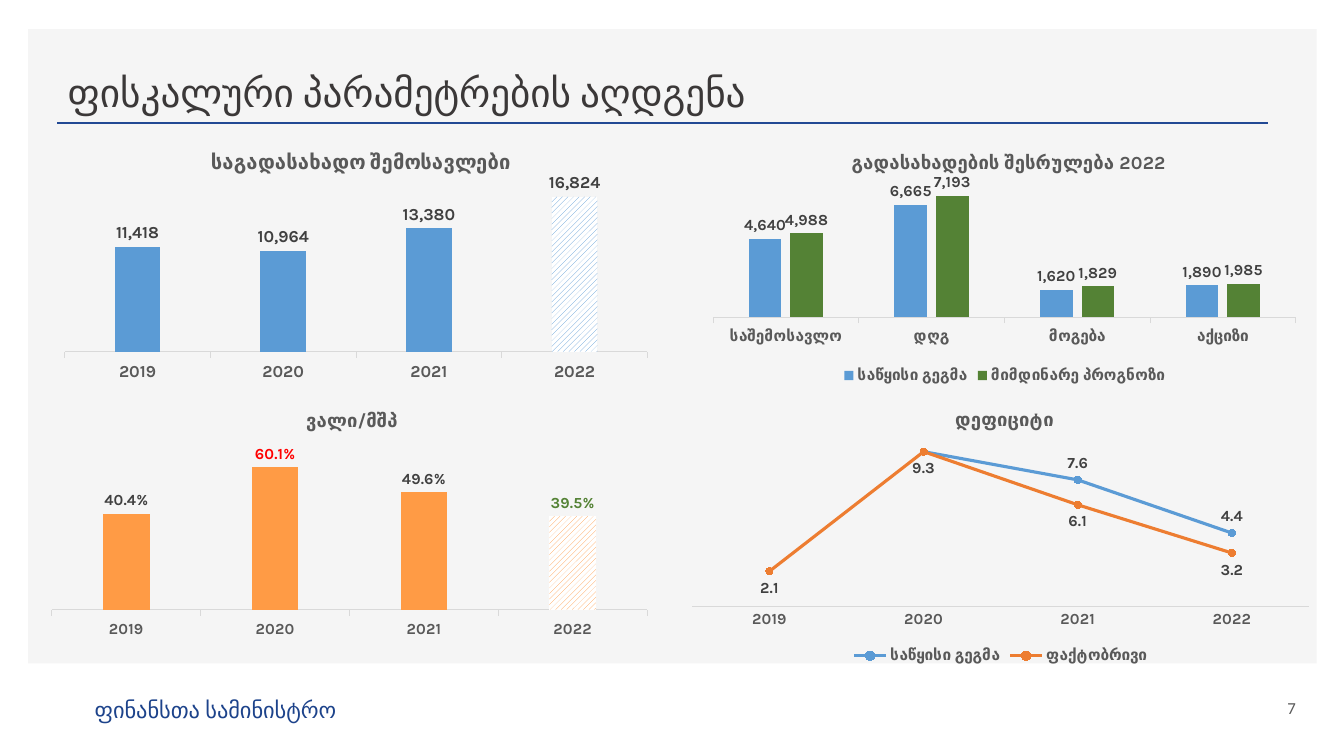
"""Build the fiscal recovery slide with four charts."""
from dataclasses import dataclass

import pptx
import pptx.chart.data
import pptx.dml.color
import pptx.enum.chart
import pptx.enum.dml
import pptx.enum.shapes
import pptx.enum.text
import pptx.oxml
import pptx.oxml.ns
import pptx.util

Inches, Pt = pptx.util.Inches, pptx.util.Pt
XL = pptx.enum.chart
ALIGN, ANCHOR = pptx.enum.text.PP_ALIGN, pptx.enum.text.MSO_ANCHOR


@dataclass(frozen=True)
class Theme:
    panel: str = "F5F5F5"
    rule: str = "224994"
    footer: str = "1D438B"
    heading: str = "3B3838"
    muted: str = "595959"
    label: str = "404040"
    axis: str = "D9D9D9"
    white: str = "FFFFFF"
    blue: str = "5B9BD5"
    green: str = "548235"
    orange: str = "ED7D31"
    amber: str = "FF9B45"
    red: str = "FF0000"
    font: str = "Karla"
    title_font: str = "Calibri"
    title_size: int = 28
    footer_size: int = 16
    number_size: int = 12


T = Theme()
TITLE = "ფისკალური პარამეტრების აღდგენა"
FOOTER = "ფინანსთა სამინისტრო"
PAGE = "7"
YEARS = ["2019", "2020", "2021", "2022"]
TAXES = ["საშემოსავლო", "დღგ", "მოგება", "აქციზი"]
PLAN = "საწყისი გეგმა"
CHARTS = [
    dict(title="საგადასახადო შემოსავლები", title_at=(0.257, 0.05), box=(0.49, 1.3, 6.09, 2.9),
         plot=(0.025, 0.188, 0.949, 0.567), size=12, cats=YEARS, top=18000, fmt="#,##0",
         series=[("Series 1", (11418, 10964, 13380, 16824), T.blue)], hatched=3),
    dict(title="ვალი/მშპ", title_at=(0.425, 0.05), box=(0.36, 3.86, 6.22, 2.9),
         plot=(0.025, 0.188, 0.949, 0.567), size=11, cats=YEARS, top=0.7, fmt="0.0%",
         series=[("Series 1", (0.404, 0.601, 0.496, 0.395), T.amber)], hatched=3,
         accents={1: T.red, 3: T.green}),
    dict(title="დეფიციტი", title_at=(0.424, 0.05), box=(6.74, 3.86, 6.37, 2.78),
         plot=(0.02, 0.182, 0.96, 0.593), size=11, cats=YEARS, top=10, fmt="#,##0.0", line=True,
         series=[(PLAN, (None, 9.3, 7.6, 4.4), T.blue),
                 ("ფაქტობრივი", (2.1, 9.3, 6.1, 3.2), T.orange)]),
    dict(title="გადასახადების შესრულება 2022", title_at=(0.245, 0.06), box=(6.92, 1.3, 6.09, 2.56),
         plot=(0.025, 0.199, 0.949, 0.523), size=11, cats=TAXES, top=8000, fmt="#,##0",
         series=[(PLAN, (4640, 6665, 1620, 1890), T.blue),
                 ("მიმდინარე პროგნოზი", (4988, 7193, 1829, 1985), T.green)]),
]


def rgb(code):
    return pptx.dml.color.RGBColor.from_string(code)


def style(font, size, color, name=T.font, bold=True):
    font.size, font.name, font.bold = Pt(size), name, bold
    font.color.rgb = rgb(color)


def write(tf, text, size, color, name, align=ALIGN.LEFT, anchor=ANCHOR.TOP):
    tf.vertical_anchor = anchor
    p = tf.paragraphs[0]
    p.alignment = align
    r = p.add_run()
    r.text = text
    style(r.font, size, color, name, False)


def chart_xml(body):
    return pptx.oxml.parse_xml(body.replace(">", f" {pptx.oxml.ns.nsdecls('c')}>", 1))


def set_layout(parent, values, inner=False):
    target = '<c:layoutTarget val="inner"/>' if inner else ""
    modes = '<c:xMode val="edge"/><c:yMode val="edge"/>'
    sides = "".join(f'<c:{k} val="{v}"/>' for k, v in zip("xywh", values))
    layout = chart_xml(f"<c:layout><c:manualLayout>{target}{modes}{sides}"
                       "</c:manualLayout></c:layout>")
    old = parent.find(pptx.oxml.ns.qn("c:layout"))
    if old is None:
        parent.insert(0, layout)
    else:
        parent.replace(old, layout)


def style_axes(chart, size, top):
    ca, va = chart.category_axis, chart.value_axis
    is_line = chart.chart_type == XL.XL_CHART_TYPE.LINE_MARKERS
    ca.major_tick_mark = XL.XL_TICK_MARK.NONE if is_line else XL.XL_TICK_MARK.OUTSIDE
    ca.format.line.color.rgb = rgb(T.axis)
    ca.format.line.width = Pt(0.75)
    style(ca.tick_labels.font, size, T.muted)
    va.visible = va.has_major_gridlines = False
    va.minimum_scale, va.maximum_scale = 0, top


def style_labels(ser, size, fmt, position):
    labels = ser.data_labels
    labels.show_value = True
    labels.number_format, labels.number_format_is_linked = fmt, False
    labels.position = position
    style(labels.font, size, T.label)
    return labels


def style_line(ser, color, size, fmt, first):
    ser.smooth = False
    ser.format.line.color.rgb = rgb(color)
    ser.format.line.width = Pt(2.25)
    ser.marker.style, ser.marker.size = XL.XL_MARKER_STYLE.CIRCLE, 5
    for part in (ser.marker.format.fill, ser.marker.format.line.fill):
        part.solid()
        part.fore_color.rgb = rgb(color)
    pos = XL.XL_LABEL_POSITION
    labels = style_labels(ser, size, fmt, pos.ABOVE if first else pos.BELOW)
    if first:
        labels._element.insert(0, chart_xml('<c:dLbl><c:idx val="1"/><c:delete val="1"/></c:dLbl>'))


def style_bars(ser, color, size, fmt, hatched, accents):
    outside = XL.XL_LABEL_POSITION.OUTSIDE_END
    ser.format.fill.solid()
    ser.format.fill.fore_color.rgb = rgb(color)
    style_labels(ser, size, fmt, outside)
    if hatched is not None:
        fill = ser.points[hatched].format.fill
        fill.patterned()
        fill.pattern = pptx.enum.dml.MSO_PATTERN.WIDE_UPWARD_DIAGONAL
        fill.fore_color.rgb, fill.back_color.rgb = rgb(color), rgb(T.white)
    for i, accent in accents.items():
        label = ser.points[i].data_label
        style(label.font, size, accent)
        label.position = outside


def add_chart(s, title, title_at, box, plot, size, cats, top, fmt, series,
              hatched=None, accents=None, line=False):
    data = pptx.chart.data.CategoryChartData(number_format=fmt)
    data.categories = cats
    for name, values, _ in series:
        data.add_series(name, values)
    kind = XL.XL_CHART_TYPE.LINE_MARKERS if line else XL.XL_CHART_TYPE.COLUMN_CLUSTERED
    chart = s.shapes.add_chart(kind, *map(Inches, box), data).chart
    style(chart.font, size, T.muted)
    r = chart.chart_title.text_frame.paragraphs[0].add_run()
    r.text = title
    style(r.font, round(size * 1.2, 1), T.muted)
    set_layout(chart.chart_title._element, title_at)
    set_layout(chart._chartSpace.chart.plotArea, plot, True)
    style_axes(chart, size, top)
    chart.has_legend = len(series) > 1
    if chart.has_legend:
        chart.legend.position = XL.XL_LEGEND_POSITION.BOTTOM
        chart.legend.include_in_layout = False
        style(chart.legend.font, size, T.muted)
    bars = chart.plots[0]
    bars.vary_by_categories = False
    if not line:
        bars.gap_width, bars.overlap = 219, -27
    for i, (ser, (_, _, color)) in enumerate(zip(bars.series, series)):
        if line:
            style_line(ser, color, size, fmt, i == 0)
        else:
            style_bars(ser, color, size, fmt, hatched, accents or {})


def add_frame(s):
    panel = s.shapes.add_shape(pptx.enum.shapes.MSO_SHAPE.RECTANGLE,
                               *map(Inches, (0.28, 0.29, 12.78, 6.29)))
    panel.shadow.inherit = False
    panel.fill.solid()
    panel.fill.fore_color.rgb = rgb(T.panel)
    panel.line.fill.background()
    rule = s.shapes.add_connector(pptx.enum.shapes.MSO_CONNECTOR.STRAIGHT,
                                  *map(Inches, (0.57, 1.22, 12.58, 1.22)))
    rule.line.color.rgb = rgb(T.rule)
    rule.line.width = Pt(2)
    rule._element.spPr.append(pptx.oxml.parse_xml(f"<a:effectLst {pptx.oxml.ns.nsdecls('a')}/>"))
    footer = s.shapes.add_textbox(*map(Inches, (0.84, 6.86, 2.81, 0.37)))
    write(footer.text_frame, FOOTER, T.footer_size, T.footer, T.font)
    title = s.shapes.title
    title.left, title.top, title.width, title.height = map(Inches, (0.57, 0.49, 12.33, 0.7))
    write(title.text_frame, TITLE, T.title_size, T.heading, T.title_font, anchor=ANCHOR.BOTTOM)
    s.shapes._spTree.append(title._element)
    number = s.shapes.add_textbox(*map(Inches, (9.37, 6.87, 3.58, 0.3)))
    number.text_frame.word_wrap = True
    write(number.text_frame, PAGE, T.number_size, T.muted, T.title_font, ALIGN.RIGHT, ANCHOR.MIDDLE)


def main():
    prs = pptx.Presentation()
    prs.slide_width, prs.slide_height = Inches(13.33), Inches(7.5)
    s = prs.slides.add_slide(prs.slide_layouts[5])
    add_frame(s)
    for chart in CHARTS:
        add_chart(s, **chart)
    prs.save("out.pptx")


if __name__ == "__main__":
    main()
